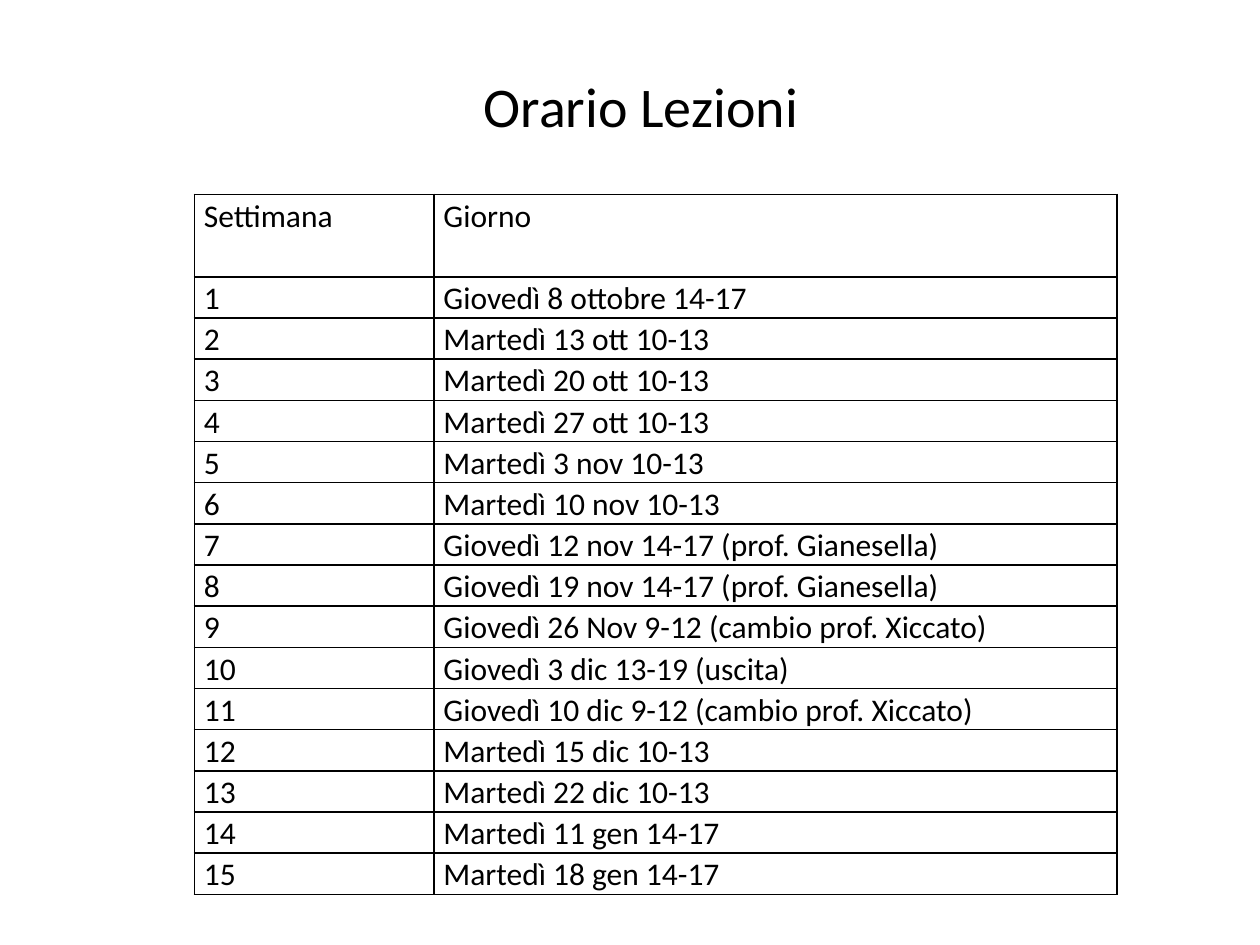
from pptx import Presentation
from pptx.dml.color import RGBColor
from pptx.enum.text import MSO_AUTO_SIZE
from pptx.oxml import parse_xml
from pptx.oxml.ns import nsdecls
from pptx.util import Cm, Pt

BLACK = RGBColor(0, 0, 0)
FONT = "Calibri"
DAYS = [
    "Giovedì 8 ottobre 14-17",
    "Martedì 13 ott 10-13",
    "Martedì 20 ott 10-13",
    "Martedì 27 ott 10-13",
    "Martedì 3 nov 10-13",
    "Martedì 10 nov 10-13",
    "Giovedì 12 nov 14-17 (prof. Gianesella)",
    "Giovedì 19 nov 14-17 (prof. Gianesella)",
    "Giovedì 26 Nov 9-12 (cambio prof. Xiccato)",
    "Giovedì 3 dic 13-19 (uscita)",
    "Giovedì 10 dic 9-12 (cambio prof. Xiccato)",
    "Martedì 15 dic 10-13",
    "Martedì 22 dic 10-13",
    "Martedì 11 gen 14-17",
    "Martedì 18 gen 14-17",
]


def write(frame, text, size):
    frame.text = text
    font = frame.paragraphs[0].runs[0].font
    font.name, font.size, font.bold = FONT, Pt(size), False
    font.color.rgb = BLACK


def add_borders(cell):
    properties = cell._tc.get_or_add_tcPr()
    for position, side in enumerate(("lnL", "lnR", "lnT", "lnB")):
        properties.insert(position, parse_xml(
            f'<a:{side} {nsdecls("a")} w="{Pt(1)}"><a:solidFill>'
            f'<a:srgbClr val="{BLACK}"/></a:solidFill></a:{side}>'))


deck = Presentation()
deck.slide_width, deck.slide_height = Cm(25.4), Cm(19.05)
page = deck.slides.add_slide(deck.slide_layouts[6])

# Timetable: weeks are numbered from 1
rows = [("Settimana", "Giorno")]
rows += [(str(week), day) for week, day in enumerate(DAYS, 1)]
header_height, row_height = Cm(1.66), Cm(0.83)
table = page.shapes.add_table(
    len(rows), 2, Cm(3.92), Cm(3.92), Cm(18.6),
    header_height + row_height * len(DAYS)).table
table.first_row = table.horz_banding = False
table.columns[0].width = Cm(4.83)
table.columns[1].width = Cm(13.77)

for index, texts in enumerate(rows):
    table.rows[index].height = row_height if index else header_height
    for cell, text in zip(table.rows[index].cells, texts):
        write(cell.text_frame, text, 18)
        cell.text_frame.paragraphs[0].line_spacing = 1.07
        cell.margin_left = cell.margin_right = Cm(0.19)
        cell.margin_top = cell.margin_bottom = 0
        cell.fill.background()
        add_borders(cell)

# Title
title = page.shapes.add_textbox(Cm(9.5), Cm(1.32), Cm(7.19), Cm(1.63))
title.text_frame.word_wrap = False
title.text_frame.auto_size = MSO_AUTO_SIZE.SHAPE_TO_FIT_TEXT
write(title.text_frame, "Orario Lezioni", 32)

deck.save("out.pptx")
